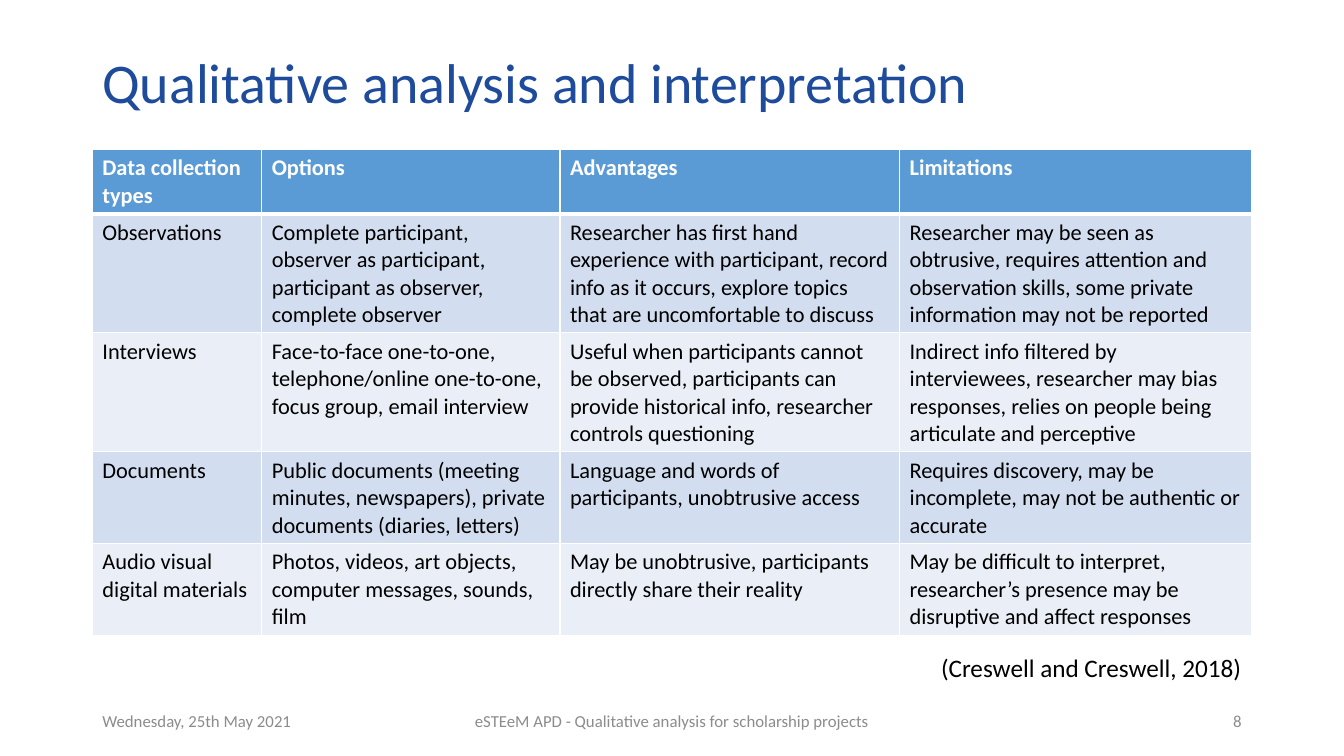
import pptx
import pptx.dml.color
import pptx.enum.text
import pptx.oxml
import pptx.oxml.ns
import pptx.util

Pt = pptx.util.Pt
ALIGN = pptx.enum.text.PP_ALIGN
ANCHOR = pptx.enum.text.MSO_ANCHOR

FONT = "Calibri"
WHITE, BLACK, GREY, NAVY = "FFFFFF", "000000", "8C8C8C", "1E4B9B"
HEADER_FILL = "5B9BD5"
BAND_FILLS = ("D2DEEF", "EAEFF7")

COLUMN_WIDTHS = (121, 213, 242.6, 251.4)
ROW_HEIGHTS = (46, 85, 85, 65.5, 65.5)
ROWS = (
    ("Data collection types", "Options", "Advantages", "Limitations"),
    (
        "Observations",
        "Complete participant, observer as participant, participant as observer, complete observer",
        "Researcher has first hand experience with participant, record info as it occurs, "
        "explore topics that are uncomfortable to discuss",
        "Researcher may be seen as obtrusive, requires attention and observation skills, "
        "some private information may not be reported",
    ),
    (
        "Interviews",
        "Face-to-face one-to-one, telephone/online one-to-one, focus group, email interview",
        "Useful when participants cannot be observed, participants can provide historical info, "
        "researcher controls questioning",
        "Indirect info filtered by interviewees, researcher may bias responses, "
        "relies on people being articulate and perceptive",
    ),
    (
        "Documents",
        "Public documents (meeting minutes, newspapers), private documents (diaries, letters)",
        "Language and words of participants, unobtrusive access",
        "Requires discovery, may be incomplete, may not be authentic or accurate",
    ),
    (
        "Audio visual digital materials",
        "Photos, videos, art objects, computer messages, sounds, film",
        "May be unobtrusive, participants directly share their reality",
        "May be difficult to interpret, researcher’s presence may be disruptive and affect responses",
    ),
)


def color(value):
    return pptx.dml.color.RGBColor.from_string(value)


def format_text(paragraph, size, hex_color, bold=False):
    for run in paragraph.runs:
        run.font.name = FONT
        run.font.size = Pt(size)
        run.font.bold = bold
        run.font.color.rgb = color(hex_color)


def add_text(slide, box, text, size, hex_color, align=ALIGN.LEFT, anchor=ANCHOR.MIDDLE):
    shape = slide.shapes.add_textbox(*(Pt(length) for length in box))
    frame = shape.text_frame
    frame.word_wrap = True
    frame.vertical_anchor = anchor
    frame.text = text
    paragraph = frame.paragraphs[0]
    paragraph.alignment = align
    format_text(paragraph, size, hex_color)
    return paragraph


def set_borders(cell, top, bottom):
    properties = cell._tc.get_or_add_tcPr()
    for side, width in (("L", 1), ("R", 1), ("T", top), ("B", bottom)):
        properties.append(pptx.oxml.parse_xml(
            f'<a:ln{side} {pptx.oxml.ns.nsdecls("a")} w="{Pt(width)}">'
            f'<a:solidFill><a:srgbClr val="{WHITE}"/></a:solidFill></a:ln{side}>'
        ))


def add_title(slide, box):
    paragraph = add_text(slide, box, "Qualitative analysis and interpretation", 40, NAVY)
    paragraph.line_spacing = 0.9


def add_methods_table(slide, left, top):
    table = slide.shapes.add_table(
        len(ROWS), len(COLUMN_WIDTHS), Pt(left), Pt(top),
        Pt(sum(COLUMN_WIDTHS)), Pt(sum(ROW_HEIGHTS)),
    ).table
    for column, width in zip(table.columns, COLUMN_WIDTHS):
        column.width = Pt(width)
    for index, (row, height, texts) in enumerate(zip(table.rows, ROW_HEIGHTS, ROWS)):
        row.height = Pt(height)
        header = index == 0
        for cell, text in zip(row.cells, texts):
            set_borders(cell, 3 if index == 1 else 1, 3 if header else 1)
            cell.fill.solid()
            cell.fill.fore_color.rgb = color(HEADER_FILL if header else BAND_FILLS[(index - 1) % 2])
            cell.text_frame.text = text
            format_text(cell.text_frame.paragraphs[0], 16, WHITE if header else BLACK, header)


def add_citation(slide, box):
    add_text(slide, box, "(Creswell and Creswell, 2018)", 18, BLACK, ALIGN.RIGHT, ANCHOR.TOP)


def add_footer(slide, left, top, width, height):
    parts = (
        ("Wednesday, 25th May 2021", left, 216, ALIGN.LEFT),
        ("eSTEeM APD - Qualitative analysis for scholarship projects",
         left + (width - 324) / 2, 324, ALIGN.CENTER),
        ("8", left + width - 216, 216, ALIGN.RIGHT),
    )
    for text, part_left, part_width, align in parts:
        add_text(slide, (part_left, top, part_width, height), text, 12, GREY, align)


def main():
    presentation = pptx.Presentation()
    presentation.slide_width = Pt(960)
    presentation.slide_height = Pt(540)
    slide = presentation.slides.add_slide(presentation.slide_layouts[6])
    add_title(slide, (66, 28.8, 828, 64.8))
    add_methods_table(slide, 66, 106.8)
    add_footer(slide, 66, 500.5, 828, 28.8)
    add_citation(slide, (659.8, 462.4, 234, 29))
    presentation.save("out.pptx")


if __name__ == "__main__":
    main()
